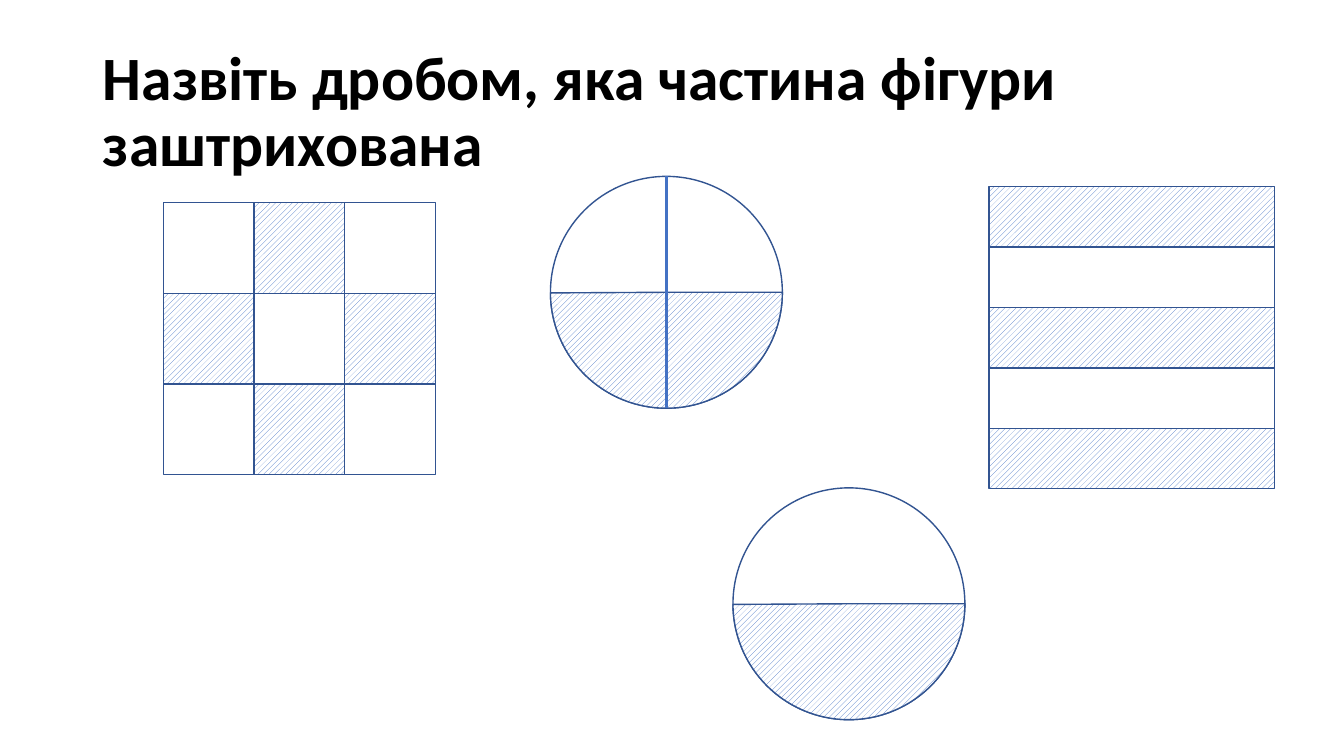
from dataclasses import dataclass

from lxml import etree
from pptx import Presentation
from pptx.dml.color import RGBColor
from pptx.enum.dml import MSO_PATTERN
from pptx.enum.shapes import MSO_CONNECTOR, MSO_SHAPE
from pptx.enum.text import MSO_ANCHOR, PP_ALIGN
from pptx.oxml.ns import qn
from pptx.util import Emu, Pt

RECTANGLE, ELLIPSE, PIE = MSO_SHAPE.RECTANGLE, MSO_SHAPE.OVAL, MSO_SHAPE.PIE
HATCH = MSO_PATTERN.WIDE_UPWARD_DIAGONAL
STRAIGHT = MSO_CONNECTOR.STRAIGHT
MIDDLE, LEFT = MSO_ANCHOR.MIDDLE, PP_ALIGN.LEFT
PX = 9144
TITLE_ONLY = 5
HALF_TURN = 107.81


@dataclass(frozen=True)
class Theme:
    """Colours, font and sizes of the slide."""
    font: str = "Calibri"
    title_size: int = 44
    ink: RGBColor = RGBColor(0, 0, 0)
    paper: RGBColor = RGBColor(255, 255, 255)
    accent: RGBColor = RGBColor(0x44, 0x72, 0xC4)
    outline: RGBColor = RGBColor(0x32, 0x54, 0x91)
    outline_width: float = 1
    divider_width: float = 2.25


THEME = Theme()


def px(*lengths):
    """Turn pixel lengths into EMU."""
    return [Emu(length * PX) for length in lengths]


def add_part(page, kind, box, hatched):
    """Draw one outlined part, plain or hatched."""
    part = page.shapes.add_shape(kind, *px(*box))
    part.shadow.inherit = False
    if hatched:
        part.fill.patterned()
        part.fill.pattern = HATCH
        part.fill.fore_color.rgb = THEME.accent
        part.fill.back_color.rgb = THEME.paper
    else:
        part.fill.solid()
        part.fill.fore_color.rgb = THEME.paper
    part.line.color.rgb = THEME.outline
    part.line.width = Pt(THEME.outline_width)
    return part


def add_title(page, box, text):
    """Place and format the slide title."""
    title = page.shapes.title
    title.left, title.top, title.width, title.height = px(*box)
    frame = title.text_frame
    frame.text = text
    frame.word_wrap = True
    frame.vertical_anchor = MIDDLE
    para = frame.paragraphs[0]
    para.alignment = LEFT
    para.line_spacing = 0.9
    font = para.runs[0].font
    font.name, font.size, font.bold = THEME.font, Pt(THEME.title_size), True
    font.color.rgb = THEME.ink


def add_half_circle(page, box):
    """Draw a circle whose lower half is hatched."""
    add_part(page, ELLIPSE, box, False)
    half = add_part(page, PIE, box, True)
    half.adjustments[0] = 0
    half.adjustments[1] = HALF_TURN


def add_quartered_circle(page, box):
    """Draw a half-hatched circle with a vertical divider."""
    add_half_circle(page, box)
    left, top, width, height = box
    middle = left + width // 2
    divider = page.shapes.add_connector(STRAIGHT, *px(middle, top, middle, top + height))
    divider.line.color.rgb = THEME.accent
    divider.line.width = Pt(THEME.divider_width)
    etree.SubElement(divider._element.spPr, qn("a:effectLst"))


def add_checkerboard(page, box, rows, columns):
    """Draw a grid in which every second cell is hatched."""
    left, top, width, height = box
    cell_width, cell_height = width // columns, height // rows
    for row in range(rows):
        for column in range(columns):
            cell = (left + column * cell_width, top + row * cell_height,
                    cell_width, cell_height)
            add_part(page, RECTANGLE, cell, (row + column) % 2 == 1)


def add_stripes(page, box, count):
    """Draw stacked stripes, hatched alternately from the top."""
    left, top, width, height = box
    stripe_height = height // count
    for index in range(count):
        stripe = (left, top + index * stripe_height, width, stripe_height)
        add_part(page, RECTANGLE, stripe, index % 2 == 0)


def main():
    """Build the slide and save the deck."""
    deck = Presentation()
    deck.slide_width, deck.slide_height = px(1333, 750)
    page = deck.slides.add_slide(deck.slide_layouts[TITLE_ONLY])
    add_title(page, (92, 40, 1150, 145), "Назвіть дробом, яка частина фігури заштрихована")
    add_half_circle(page, (727, 484, 230, 230))
    add_quartered_circle(page, (546, 175, 230, 230))
    add_stripes(page, (981, 185, 283, 300), 5)
    add_checkerboard(page, (162, 201, 270, 270), 3, 3)
    deck.save("out.pptx")


if __name__ == "__main__":
    main()
